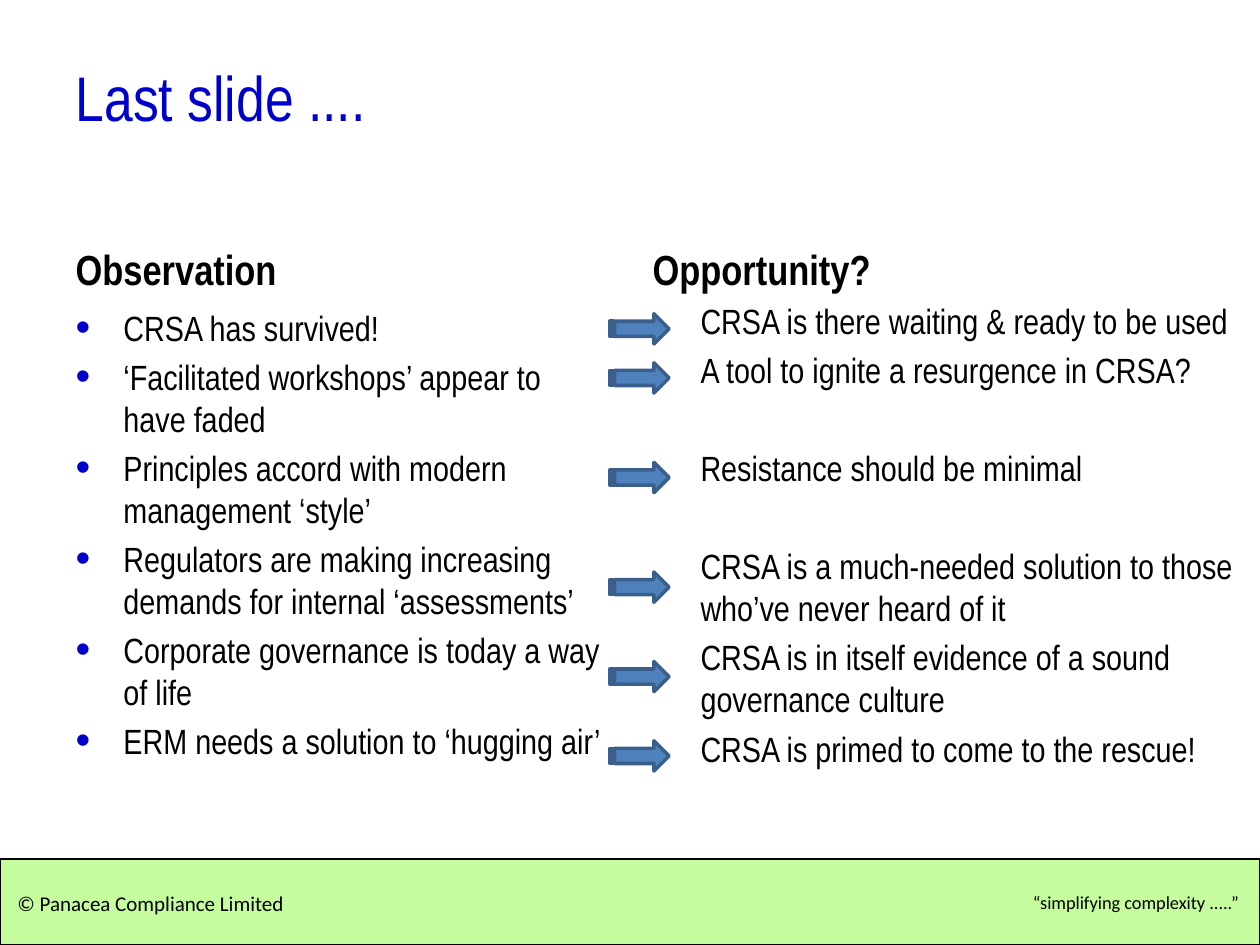
from dataclasses import dataclass

from lxml.etree import SubElement
from pptx import Presentation
from pptx.dml.color import RGBColor
from pptx.enum.shapes import MSO_SHAPE as Preset
from pptx.enum.text import MSO_ANCHOR as Anchor, MSO_AUTO_SIZE as AutoSize, PP_ALIGN as Align
from pptx.oxml.ns import qn
from pptx.util import Inches, Pt

BLACK = RGBColor(0x00, 0x00, 0x00)
BLUE = RGBColor(0x00, 0x00, 0xCC)
GREEN = RGBColor(0xC4, 0xFC, 0x9E)
ARROW_FILL = RGBColor(0x4F, 0x81, 0xBD)
ARROW_LINE = RGBColor(0x3A, 0x5F, 0x8C)

ITEM_GAP = 4
SKIPPED_ROW = 28  # one item line and its gap


@dataclass
class Item:
    text: str
    gap: float = ITEM_GAP


@dataclass
class Column:
    left: float
    heading: str
    items: list[Item]
    list_top: float
    list_width: float
    bullet: bool
    heading_id: int
    list_id: int


COLUMNS = [
    Column(0.5, "Observation", [
        Item("CRSA has survived!", 0),
        Item("‘Facilitated workshops’ appear to have faded"),
        Item("Principles accord with modern management ‘style’"),
        Item("Regulators are making increasing demands for internal ‘assessments’"),
        Item("Corporate governance is today a way of life"),
        Item("ERM needs a solution to ‘hugging air’"),
    ], 2.38, 4.42, True, 1, 2),
    Column(5.08, "Opportunity?", [
        Item("CRSA is there waiting & ready to be used", 0),
        Item("A tool to ignite a resurgence in CRSA?"),
        Item("Resistance should be minimal", ITEM_GAP + SKIPPED_ROW),
        Item("CRSA is a much-needed solution to those who’ve never heard of it",
             ITEM_GAP + SKIPPED_ROW),
        Item("CRSA is in itself evidence of a sound governance culture"),
        Item("CRSA is primed to come to the rescue!"),
    ], 2.33, 4.92, False, 3, 4),
]
ARROW_TOPS = [2.49, 2.88, 3.67, 4.54, 5.25, 5.88]


def place(shape, left: float, top: float, width: float, height: float) -> None:
    shape.left, shape.top = Inches(left), Inches(top)
    shape.width, shape.height = Inches(width), Inches(height)


def set_indent(paragraph, bullet: bool) -> None:
    """Hang the text from a blue bullet, or only indent it."""
    props = paragraph._p.get_or_add_pPr()
    hang = Inches(0.38)
    props.set("marL", str(hang))
    props.set("indent", str(-hang if bullet else 0))
    if bullet:
        colour = SubElement(props, qn("a:buClr"))
        SubElement(colour, qn("a:srgbClr"), val=str(BLUE))
        SubElement(props, qn("a:buSzPct"), val="120000")
        SubElement(props, qn("a:buFont"), typeface="Arial")
        SubElement(props, qn("a:buChar"), char="•")
    else:
        SubElement(props, qn("a:buNone"))


def write(paragraph, text: str, *, size: float, font: str = "Arial Narrow",
          colour: RGBColor = BLACK, bold: bool = False, gap: float = 0) -> None:
    paragraph.alignment = Align.LEFT
    paragraph.space_before = Pt(gap)
    run = paragraph.add_run()
    run.text = text
    run.font.name, run.font.size = font, Pt(size)
    run.font.color.rgb, run.font.bold = colour, bold


def prepare_frame(shape, anchor: Anchor, wrap: bool = True):
    frame = shape.text_frame
    frame.auto_size = AutoSize.NONE
    frame.word_wrap = wrap
    frame.vertical_anchor = anchor
    return frame


def draw_shape(slide, preset: Preset, box: tuple, fill: RGBColor,
               line: RGBColor, weight: float) -> None:
    shape = slide.shapes.add_shape(preset, *map(Inches, box))
    shape.shadow.inherit = False
    shape.fill.solid()
    shape.fill.fore_color.rgb = fill
    shape.line.color.rgb = line
    shape.line.width = Pt(weight)


def draw_footer_text(slide, text: str, box: tuple, size: float, wrap: bool) -> None:
    label = slide.shapes.add_textbox(*map(Inches, box))
    frame = prepare_frame(label, Anchor.TOP, wrap)
    write(frame.paragraphs[0], text, size=size, font="Calibri")


def draw_column(slide, column: Column) -> None:
    heading = slide.placeholders[column.heading_id]
    place(heading, column.left, 1.68, 4.42, 0.7)
    frame = prepare_frame(heading, Anchor.BOTTOM)
    write(frame.paragraphs[0], column.heading, size=24, bold=True)

    listing = slide.placeholders[column.list_id]
    place(listing, column.left, column.list_top, column.list_width, 4.32)
    frame = prepare_frame(listing, Anchor.TOP)
    for index, item in enumerate(column.items):
        paragraph = frame.add_paragraph() if index else frame.paragraphs[0]
        set_indent(paragraph, column.bullet)
        write(paragraph, item.text, size=20, gap=item.gap)


def main() -> None:
    deck = Presentation()
    deck.slide_width, deck.slide_height = Inches(10), Inches(7.5)
    slide = deck.slides.add_slide(deck.slide_layouts[4])

    # Footer band
    draw_shape(slide, Preset.RECTANGLE, (0, 6.82, 10, 0.68), GREEN, BLACK, 1.25)
    draw_footer_text(slide, "© Panacea Compliance Limited", (0.04, 7.02, 2.68, 0.3), 12, True)
    draw_footer_text(slide, "“simplifying complexity .....”", (8.1, 7.02, 1.87, 0.28), 10.5, False)

    # Title
    title = slide.shapes.title
    place(title, 0.5, 0.3, 9, 0.93)
    frame = prepare_frame(title, Anchor.MIDDLE)
    write(frame.paragraphs[0], "Last slide ....", size=36, colour=BLUE)

    # Columns, and the arrows between them
    for column in COLUMNS:
        draw_column(slide, column)
    for top in ARROW_TOPS:
        draw_shape(slide, Preset.STRIPED_RIGHT_ARROW, (4.84, top, 0.47, 0.24),
                   ARROW_FILL, ARROW_LINE, 2)

    deck.save("out.pptx")


if __name__ == "__main__":
    main()
